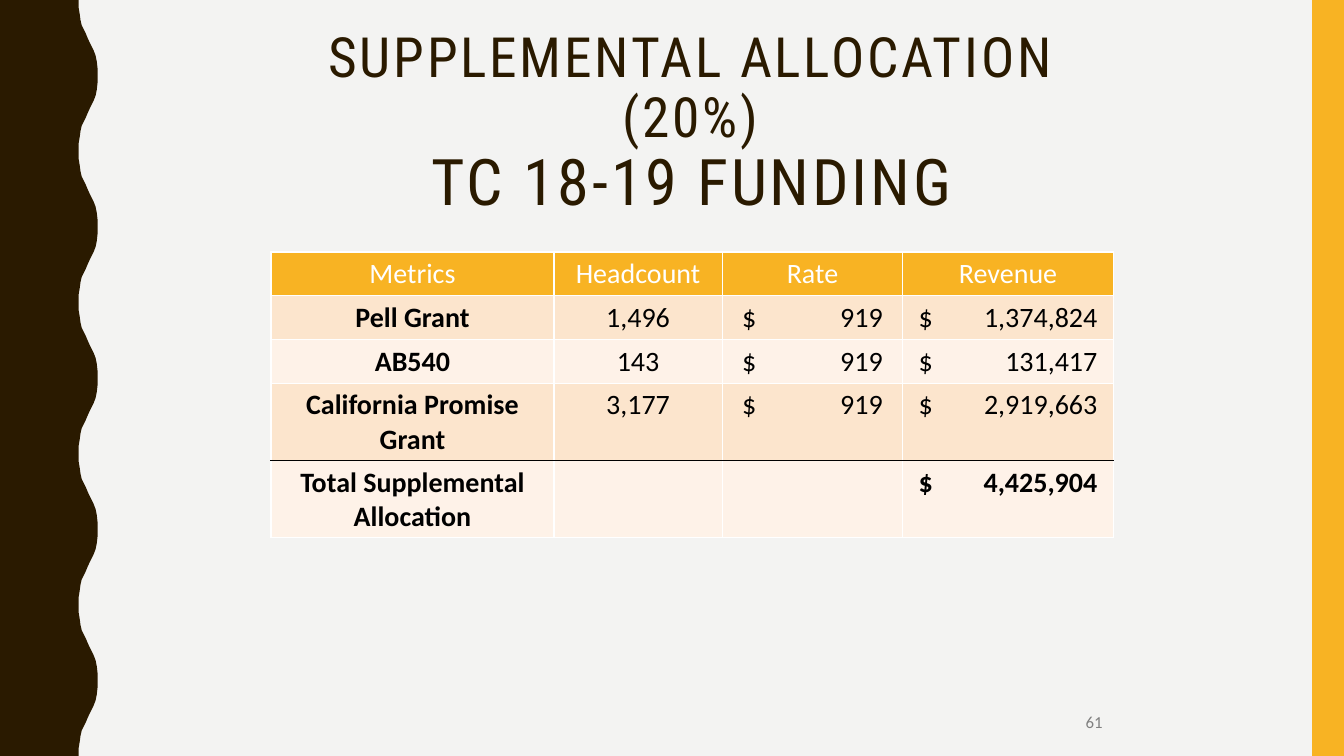
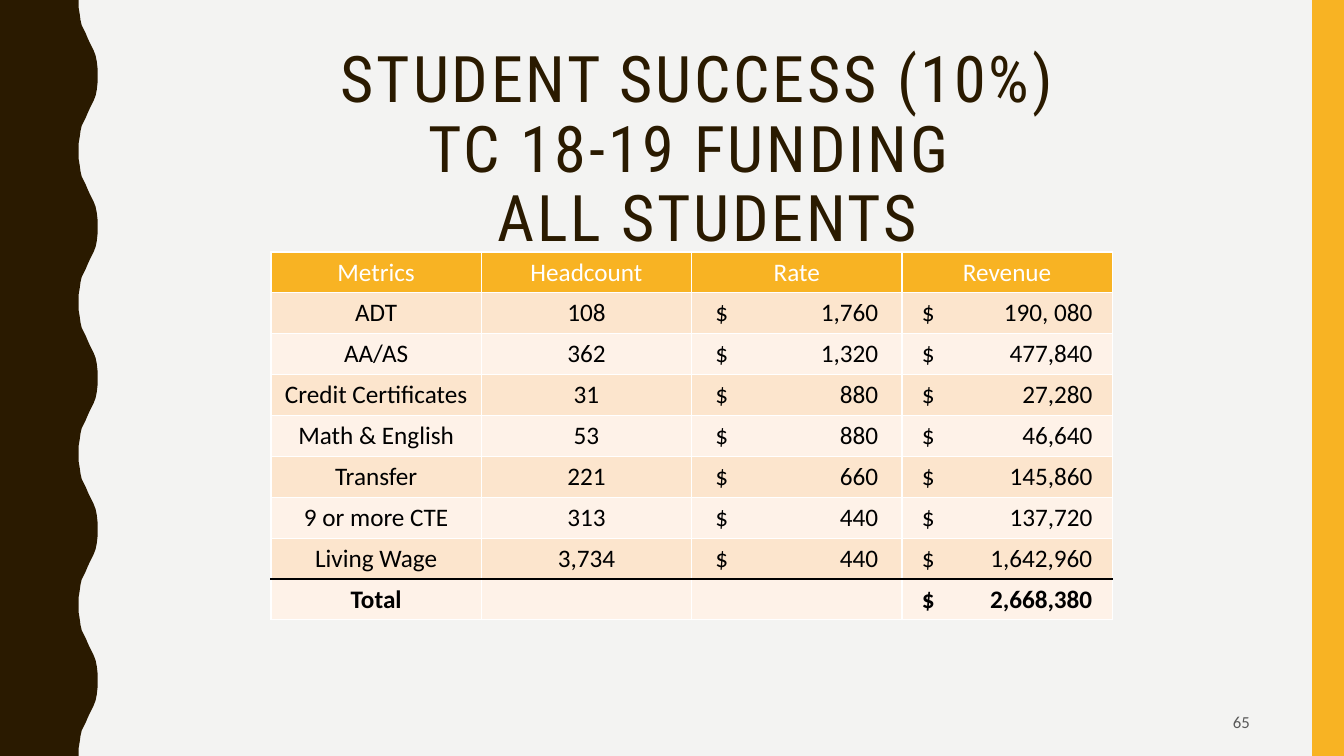
import pptx
import pptx.dml.color
import pptx.enum.shapes
import pptx.enum.text
import pptx.oxml
import pptx.oxml.ns
import pptx.util

Cm = pptx.util.Cm
Pt = pptx.util.Pt
ALIGN = pptx.enum.text.PP_ALIGN
ANCHOR = pptx.enum.text.MSO_ANCHOR
C = {
    "paper": "F3F3F2", "brown": "2A1A00", "gold": "F8B323", "peach": "FCE5CD",
    "cream": "FEF2E8", "white": "FFFFFF", "black": "000000",
    "gray": "808080", "dark gray": "595959",
}
RGB = {name: pptx.dml.color.RGBColor.from_string(value) for name, value in C.items()}
NS = pptx.oxml.ns.nsdecls("a")


def write(p, text, size=18, color="black", font="Calibri", bold=False,
          align=ALIGN.CENTER, spacing=None):
    p.alignment = align
    r = p.add_run()
    r.text = text
    r.font.size = Pt(size)
    r.font.name = font
    r.font.bold = bold
    r.font.color.rgb = RGB[color]
    if spacing:
        r._r.get_or_add_rPr().set("spc", str(spacing))


def paint(shape, color):
    shape.shadow.inherit = False
    shape.fill.solid()
    shape.fill.fore_color.rgb = RGB[color]
    shape.line.fill.background()


half_wave = [
    (198, 0), (198, 18), (201, 36), (203, 51), (206, 64), (211, 74), (216, 84),
    (221, 96), (226, 107), (231, 117), (236, 127), (241, 140), (244, 155),
    (246, 173), (246, 190.5),
]
wave_height = 381
wave = half_wave + [(x, wave_height - y) for x, y in reversed(half_wave[:-1])]
edge = [(x, y + i * wave_height) for i in range(5) for x, y in wave]

slides = [
    {
        "title": [("SUPPLEMENTAL ALLOCATION (20%)", 39.6), ("TC 18-19 FUNDING", 45.9)],
        "title_box": (6.83, 21.21), "anchor": ANCHOR.MIDDLE,
        "number": "61", "number_box": (22.17, 5.87), "number_color": "gray",
        "size": 20, "row_height": 1.04, "bold_labels": True,
        "widths": [7.13, 4.24, 4.55, 5.31], "insets": {2: 0.5, 3: 0.4},
        "rows": [
            ["Metrics", "Headcount", "Rate", "Revenue"],
            ["Pell Grant", "1,496", "919", "1,374,824"],
            ["AB540", "143", "919", "131,417"],
            ["California Promise Grant", "3,177", "919", "2,919,663"],
            ["Total Supplemental Allocation", "", "", "4,425,904"],
        ],
    },
    {
        "title": [("STUDENT SUCCESS (10%)", 45.9), ("TC 18-19 FUNDING ", 45.9),
                  (" ALL STUDENTS", 45.9)],
        "title_box": (3.48, 28.27), "anchor": ANCHOR.TOP,
        "number": "65", "number_box": (23.93, 7.82), "number_color": "dark gray",
        "size": 18, "row_height": 1.03, "bold_labels": False,
        "widths": [5.3] * 4, "insets": {2: 0.6, 3: 0.5},
        "rows": [
            ["Metrics", "Headcount", "Rate", "Revenue"],
            ["ADT", "108", "1,760", "190, 080"],
            ["AA/AS", "362", "1,320", "477,840"],
            ["Credit Certificates", "31", "880", "27,280"],
            ["Math & English", "53", "880", "46,640"],
            ["Transfer", "221", "660", "145,860"],
            ["9 or more CTE", "313", "440", "137,720"],
            ["Living Wage", "3,734", "440", "1,642,960"],
            ["Total", "", "", "2,668,380"],
        ],
    },
]

prs = pptx.Presentation()
prs.slide_width = Cm(33.87)
prs.slide_height = Cm(19.05)

for data in slides:
    s = prs.slides.add_slide(prs.slide_layouts[6])
    s.background.fill.solid()
    s.background.fill.fore_color.rgb = RGB["paper"]

    builder = s.shapes.build_freeform(0, 0, scale=Cm(0.01))
    builder.add_line_segments(edge + [(0, 1905)], close=True)
    paint(builder.convert_to_shape(), "brown")
    paint(s.shapes.add_shape(pptx.enum.shapes.MSO_SHAPE.RECTANGLE,
                             Cm(33.07), 0, Cm(0.8), prs.slide_height), "gold")

    left, width = data["title_box"]
    tf = s.shapes.add_textbox(Cm(left), Cm(1.07), Cm(width), Cm(4.14)).text_frame
    tf.word_wrap = True
    tf.vertical_anchor = data["anchor"]
    p = tf.paragraphs[0]
    p.line_spacing = 0.9
    for i, (text, size) in enumerate(data["title"]):
        if i:
            p.add_line_break()
        write(p, text, size=size, color="brown", font="Roboto Condensed", spacing=200)

    rows, widths = data["rows"], data["widths"]
    last = len(rows) - 1
    table = s.shapes.add_table(len(rows), len(widths), Cm(6.83), Cm(6.35), Cm(sum(widths)),
                               Cm(data["row_height"] * len(rows))).table
    for col, width in zip(table.columns, widths):
        col.width = Cm(width)
    for i, row in enumerate(rows):
        table.rows[i].height = Cm(data["row_height"])
        for j, text in enumerate(row):
            cell = table.cell(i, j)
            tcPr = cell._tc.get_or_add_tcPr()
            for side in "LRTB":
                total_line = (i, side) in [(last - 1, "B"), (last, "T")]
                line = C["black" if total_line else "white"]
                tcPr.append(pptx.oxml.parse_xml(
                    f'<a:ln{side} {NS} w="12700"><a:solidFill><a:srgbClr val="{line}"/>'
                    f'</a:solidFill></a:ln{side}>'))
            cell.fill.solid()
            fill = "gold" if i == 0 else "peach" if i % 2 else "cream"
            cell.fill.fore_color.rgb = RGB[fill]
            if not text:
                continue
            p = cell.text_frame.paragraphs[0]
            align = ALIGN.CENTER
            if i and j in data["insets"]:
                inset = data["insets"][j]
                cell.margin_left = Cm(inset)
                stop = Cm(widths[j] - 2 * inset)
                p._p.get_or_add_pPr().append(pptx.oxml.parse_xml(
                    f'<a:tabLst {NS}><a:tab pos="{stop}" algn="r"/></a:tabLst>'))
                align = ALIGN.LEFT
                text = "$\t" + text
            write(p, text, size=data["size"], color="black" if i else "white", align=align,
                  bold=i == last or (i > 0 and j == 0 and data["bold_labels"]))

    left, width = data["number_box"]
    tf = s.shapes.add_textbox(Cm(left), Cm(17.7), Cm(width), Cm(0.97)).text_frame
    tf.word_wrap = True
    tf.vertical_anchor = ANCHOR.MIDDLE
    write(tf.paragraphs[0], data["number"], size=12, color=data["number_color"],
          align=ALIGN.RIGHT)

prs.save("out.pptx")
